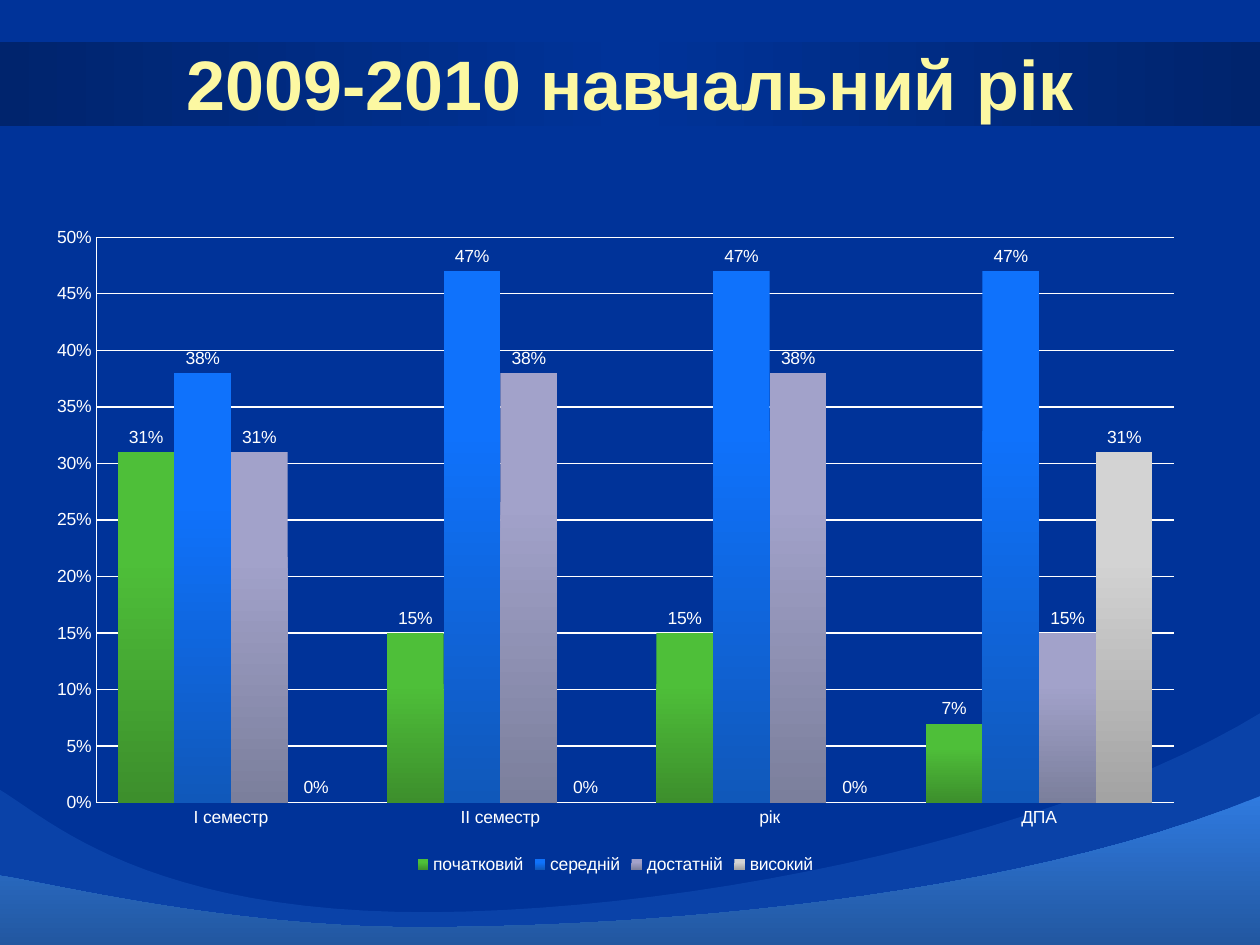
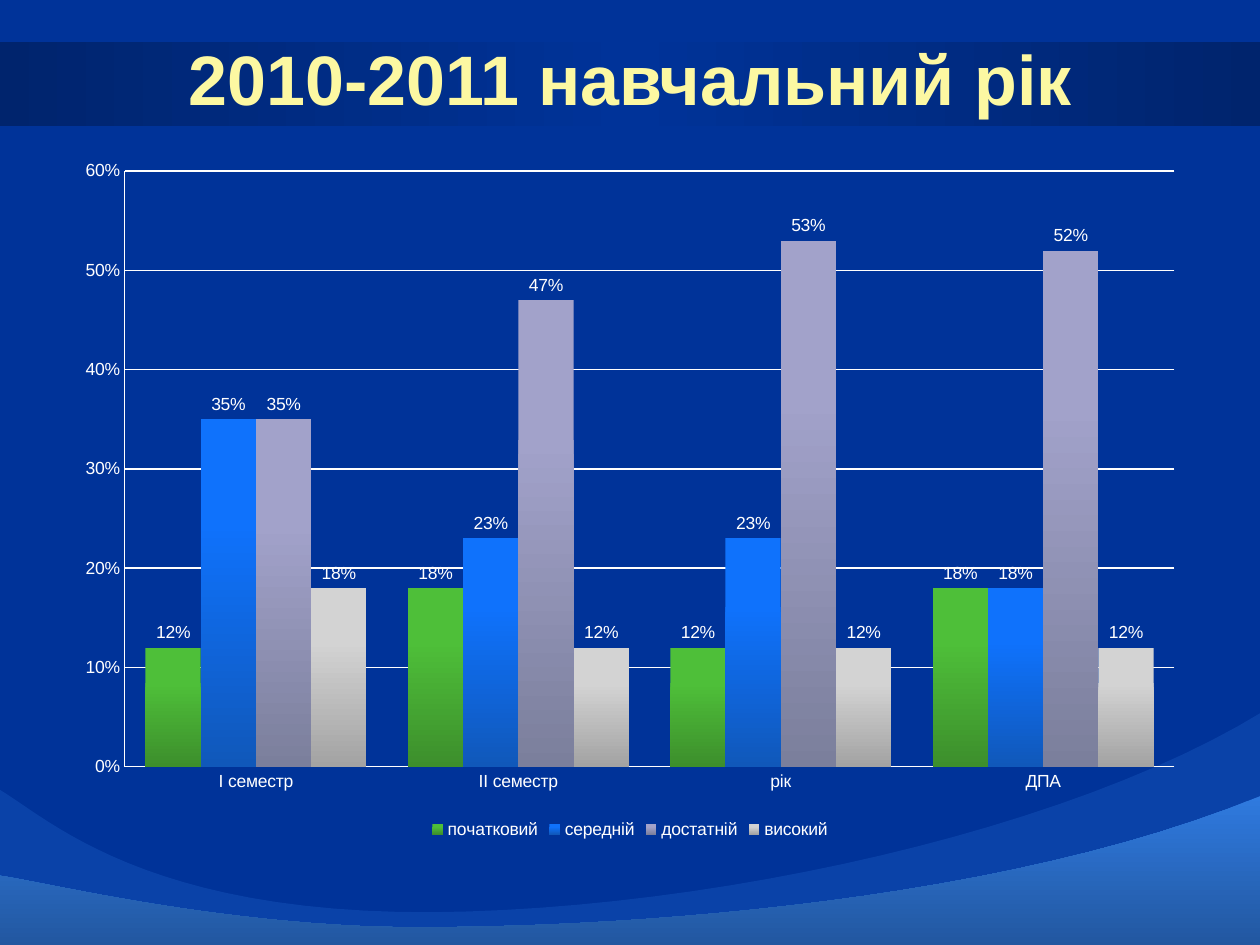
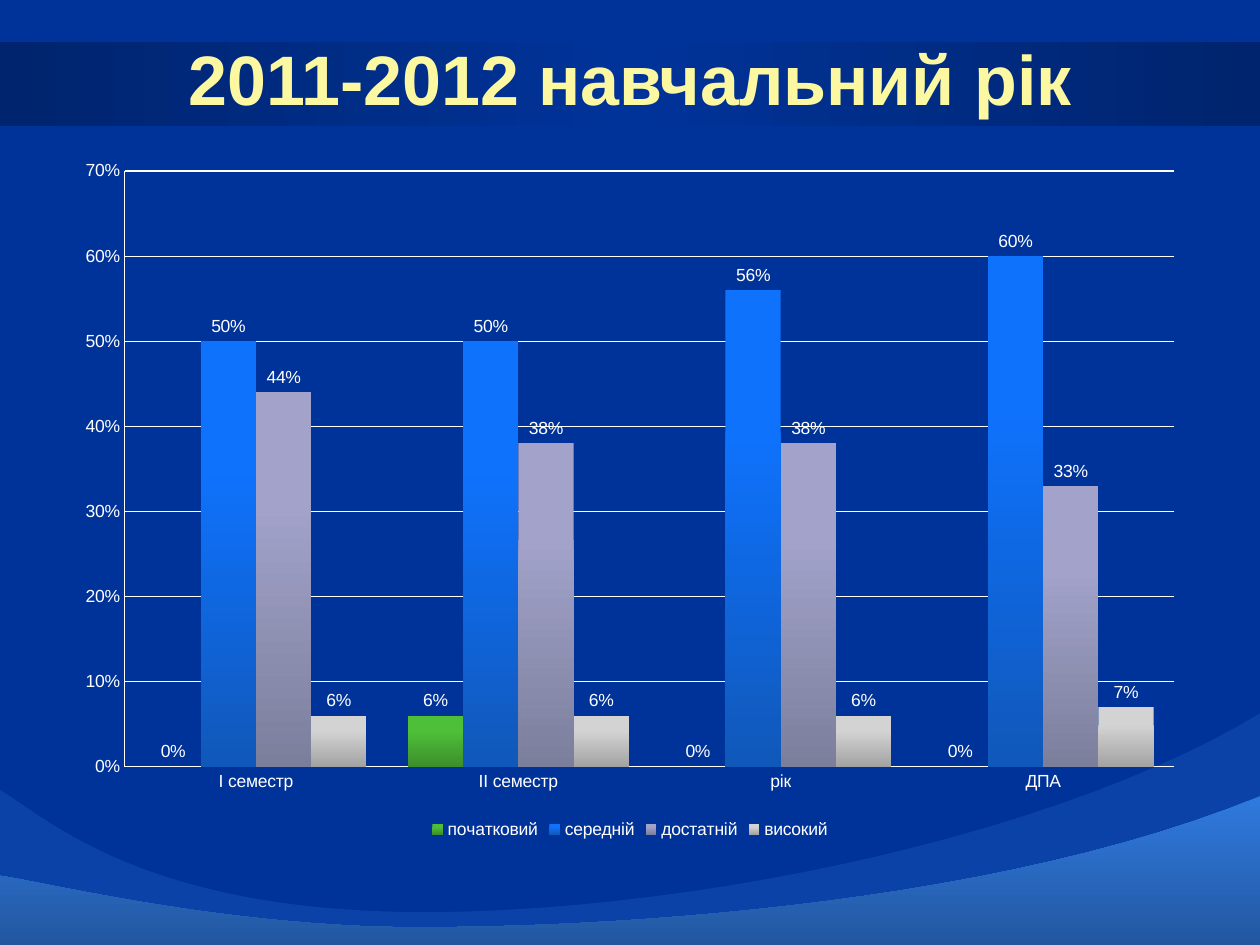
from lxml import etree
from pptx import Presentation
from pptx.chart import data
from pptx.dml.color import RGBColor
from pptx.enum import chart as ch, shapes, text
from pptx.oxml.ns import qn
from pptx.util import Pt

FONT = "Arial"
WHITE, NAVY, DARK, YELLOW = "FFFFFF", "003399", "00246D", "FCF8A2"
SKY, STEEL = "2F7ADF", "2257A0"

CATEGORIES = ["І семестр", "ІІ семестр", "рік", "ДПА"]
LEVELS = [
    ("початковий", "4EBF39", "3D8F2C"),
    ("середній", "0F72FC", "1058BA"),
    ("достатній", "A2A2CA", "7B7F9C"),
    ("високий", "D3D3D3", "A3A3A3"),
]
WAVES = [
    ("upper", (0, 451.4), [
        ((28.8, 468.7), (83.5, 522), (247, 521.3)),
        ((408, 519.8), (611.3, 474.5), (721.4, 406.8))]),
    ("lower", (-0.7, 500.4), [
        ((25.9, 504), (133.9, 531.4), (249.1, 529.9)),
        ((364.3, 529.2), (573.8, 515.5), (720, 455))]),
]
LOW_TITLE, WIDE_CHART = (0, 24.5, 720, 45), (19.4, 122.4, 664.6, 380.2)
TITLE, CHART = (36, 21.6, 648, 45), (36, 84.2, 648, 398.2)
YEARS = [
    ("2009-2010 навчальний рік", LOW_TITLE, WIDE_CHART, 0.5, 0.05, [
        (0.31, 0.15, 0.15, 0.07), (0.38, 0.47, 0.47, 0.47),
        (0.31, 0.38, 0.38, 0.15), (0, 0, 0, 0.31)]),
    ("2010-2011 навчальний рік", TITLE, CHART, 0.6, 0.1, [
        (0.12, 0.18, 0.12, 0.18), (0.35, 0.23, 0.23, 0.18),
        (0.35, 0.47, 0.53, 0.52), (0.18, 0.12, 0.12, 0.12)]),
    ("2011-2012 навчальний рік", TITLE, CHART, 0.7, 0.1, [
        (0, 0.06, 0, 0), (0.5, 0.5, 0.56, 0.6),
        (0.44, 0.38, 0.38, 0.33), (0.06, 0.06, 0.06, 0.07)]),
]


def rgb(value):
    return RGBColor.from_string(value)


def add_text(slide, words, box, size=40, color=YELLOW, bold=True):
    tf = slide.shapes.add_textbox(*[Pt(v) for v in box]).text_frame
    tf.word_wrap = True
    tf.vertical_anchor = text.MSO_ANCHOR.MIDDLE
    p = tf.paragraphs[0]
    p.alignment = text.PP_ALIGN.CENTER
    r = p.add_run()
    r.text = words
    r.font.name, r.font.size, r.font.bold = FONT, Pt(size), bold
    r.font.color.rgb = rgb(color)
    effects = etree.Element(qn("a:effectLst"))
    shadow = etree.SubElement(effects, qn("a:outerShdw"), dist=str(Pt(3)), dir="2700000")
    etree.SubElement(shadow, qn("a:srgbClr"), val="000000")
    r._r.rPr.find(qn("a:latin")).addprevious(effects)


prs = Presentation()
prs.slide_width, prs.slide_height = Pt(720), Pt(540)
background = prs.slide_master.background.fill
background.solid()
background.fore_color.rgb = rgb(NAVY)

for title, title_box, chart_box, top, step, results in YEARS:
    slide = prs.slides.add_slide(prs.slide_layouts[6])
    gradients = []

    band = slide.shapes.add_shape(shapes.MSO_SHAPE.RECTANGLE, 0, Pt(24), Pt(720), Pt(48))
    gradients.append((band.fill, band._element.spPr, 0, [(0, DARK), (50, NAVY), (100, DARK)]))
    drawn = [band]

    for name, start, curves in WAVES:
        points = [start]
        for a, b, c in curves:
            o = points[-1]
            for i in range(1, 25):
                t = i / 24
                points.append(tuple(
                    (1 - t) ** 3 * o[k] + 3 * t * (1 - t) ** 2 * a[k]
                    + 3 * t * t * (1 - t) * b[k] + t ** 3 * c[k] for k in (0, 1)))
        points += [(720, 541), (0, 541)]
        outline = slide.shapes.build_freeform(Pt(start[0]), Pt(start[1]))
        outline.add_line_segments([(Pt(x), Pt(y)) for x, y in points[1:]], close=True)
        s = outline.convert_to_shape()
        drawn.append(s)
        if name == "upper":
            s.fill.solid()
            s.fill.fore_color.rgb = rgb(SKY)
            color = s._element.spPr.find(".//" + qn("a:srgbClr"))
            etree.SubElement(color, qn("a:alpha"), val="22000")
        else:
            gradients.append((s.fill, s._element.spPr, 270, [(0, SKY), (100, STEEL)]))

    for s in drawn:
        s.shadow.inherit = False
        s.line.fill.background()

    add_text(slide, title, title_box)

    cd = data.CategoryChartData(number_format="0%")
    cd.categories = CATEGORIES
    for (level, _, _), values in zip(LEVELS, results):
        cd.add_series(level, values)
    chart = slide.shapes.add_chart(
        ch.XL_CHART_TYPE.COLUMN_CLUSTERED, *[Pt(v) for v in chart_box], cd).chart
    chart.has_title = False
    chart.font.name, chart.font.size = FONT, Pt(10)
    chart.font.color.rgb = rgb(WHITE)
    chart.has_legend = True
    chart.legend.position = ch.XL_LEGEND_POSITION.BOTTOM
    chart.legend.include_in_layout = False

    axis = chart.value_axis
    axis.minimum_scale, axis.maximum_scale, axis.major_unit = 0, top, step
    axis.has_major_gridlines = True
    axis.tick_labels.number_format = "0%"
    axis.tick_labels.number_format_is_linked = False
    for axis in (chart.value_axis, chart.category_axis):
        axis.major_tick_mark = axis.minor_tick_mark = ch.XL_TICK_MARK.NONE
    for part in (chart.value_axis, chart.category_axis, chart.value_axis.major_gridlines):
        part.format.line.color.rgb = rgb(WHITE)
        part.format.line.width = Pt(0.75)

    plot = chart.plots[0]
    plot.gap_width, plot.overlap, plot.vary_by_categories = 75, 0, False
    for ser, (_, light, dark) in zip(plot.series, LEVELS):
        labels = ser.data_labels
        labels.show_value = True
        labels.number_format, labels.number_format_is_linked = "0%", False
        labels.position = ch.XL_LABEL_POSITION.OUTSIDE_END
        gradients.append((ser.format.fill, ser._element.get_or_add_spPr(), 270,
                          [(0, light), (30, light), (100, dark)]))

    for fill, props, angle, stops in gradients:
        fill.gradient()
        fill.gradient_angle = angle
        stop_list = props.find(".//" + qn("a:gsLst"))
        for old in list(stop_list):
            stop_list.remove(old)
        for pos, color in stops:
            gs = etree.SubElement(stop_list, qn("a:gs"), pos=str(pos * 1000))
            etree.SubElement(gs, qn("a:srgbClr"), val=color)

prs.save("out.pptx")
